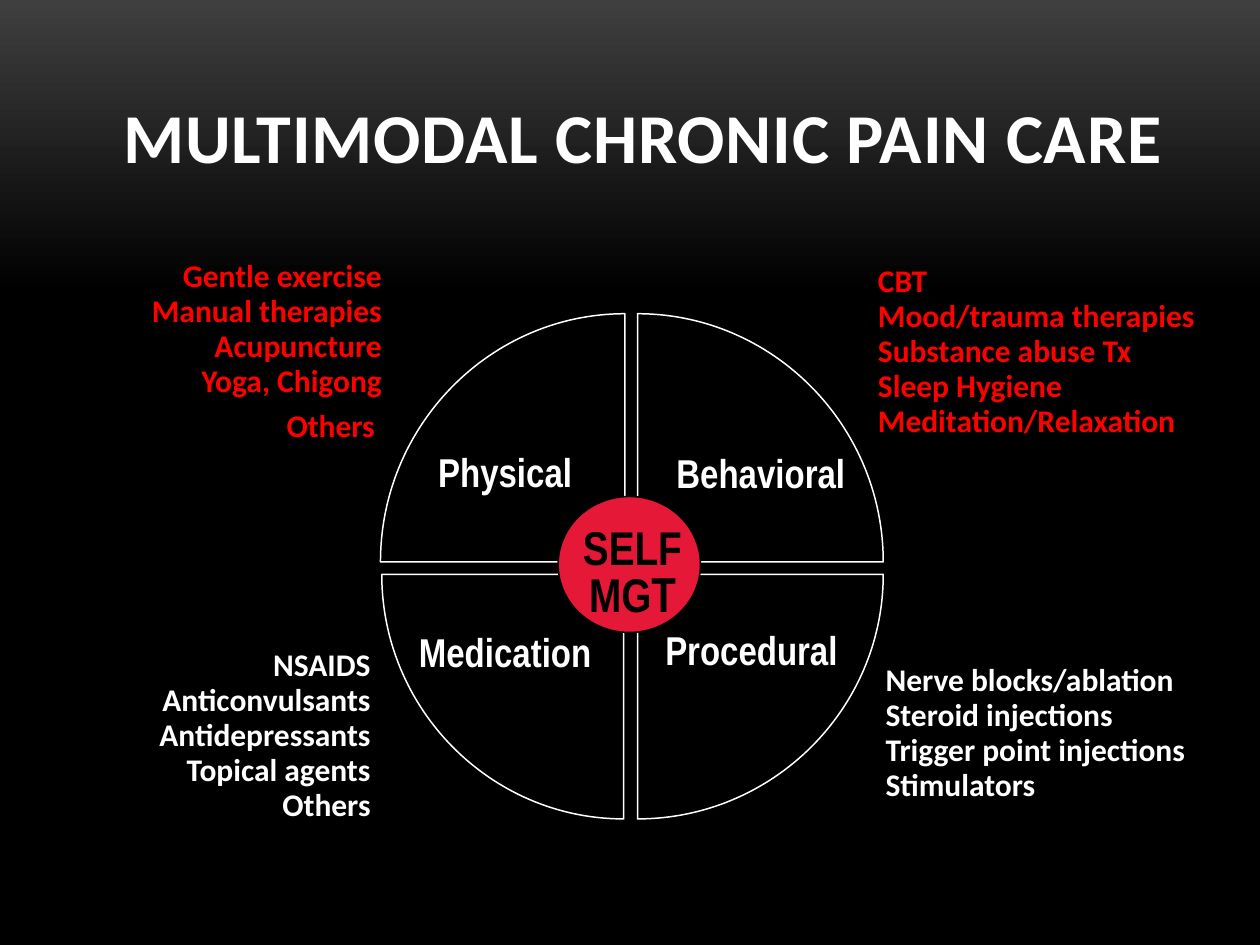
from lxml import etree
from pptx import Presentation
from pptx.dml.color import RGBColor
from pptx.enum.shapes import MSO_SHAPE
from pptx.enum.text import MSO_ANCHOR, MSO_AUTO_SIZE, PP_ALIGN
from pptx.oxml.ns import qn
from pptx.util import Inches, Pt

LEFT, CENTER, RIGHT = PP_ALIGN.LEFT, PP_ALIGN.CENTER, PP_ALIGN.RIGHT
OVAL = MSO_SHAPE.OVAL

THEME = {
    "white": RGBColor(0xFF, 0xFF, 0xFF),
    "black": RGBColor(0x00, 0x00, 0x00),
    "gray": RGBColor(0x3F, 0x3F, 0x3F),
    "red": RGBColor(0xFF, 0x00, 0x00),
    "hub": RGBColor(0xE5, 0x18, 0x37),
    "body": "Calibri",
    "narrow": "Arial Narrow",
    "title_size": 40,
    "hub_size": 27,
    "label_size": 23,
    "list_size": 18,
    "line": 0.85,
}


def add_run(p, text, font, size, color):
    r = p.add_run()
    r.text = text
    r.font.name = THEME[font]
    r.font.size = Pt(size)
    r.font.bold = True
    r.font.color.rgb = THEME[color]
    return r


def add_lines(box, lines, font, size, color, align, spacing=0.8, after=0):
    """Add a text box with one paragraph per line; return its paragraphs."""
    tf = s.shapes.add_textbox(*map(Inches, box)).text_frame
    tf.word_wrap = True
    for i, line in enumerate(lines):
        p = tf.paragraphs[0] if i == 0 else tf.add_paragraph()
        p.alignment = align
        p.line_spacing = spacing
        p.space_after = Pt(after)
        add_run(p, line, font, size, color)
    return tf.paragraphs


prs = Presentation()
prs.slide_width, prs.slide_height = Inches(10), Inches(7.5)
s = prs.slides.add_slide(prs.slide_layouts[5])

fill = s.background.fill
fill.gradient()
fill.gradient_angle = 270
for stop, position, color in zip(fill.gradient_stops, (0, 0.31), ("gray", "black")):
    stop.position = position
    stop.color.rgb = THEME[color]

# Quadrants: inner corner, signed horizontal and vertical radius
quadrants = [
    (4.95, 4.56, -1.92, 1.94),
    (5.06, 4.56, 1.95, 1.94),
    (5.06, 4.46, 1.95, -1.97),
    (4.96, 4.46, -1.94, -1.97),
]
BEZIER = 0.55  # control distance of a quarter circle, as a share of the radius
for x, y, rx, ry in quadrants:
    builder = s.shapes.build_freeform(Inches(x), Inches(y))
    ends = [(Inches(x + rx), Inches(y)), (Inches(x), Inches(y + ry))]
    builder.add_line_segments(ends, close=True)
    quadrant = builder.convert_to_shape()
    quadrant.shadow.inherit = False
    quadrant.fill.solid()
    quadrant.fill.fore_color.rgb = THEME["black"]
    quadrant.line.color.rgb = THEME["white"]
    quadrant.line.width = Pt(THEME["line"])

    # Bend the outer edge into an arc
    outer = quadrant._element.xpath(".//a:lnTo")[1]
    curve = etree.Element(qn("a:cubicBezTo"))
    for u, v in ((1, BEZIER), (BEZIER, 1), (0, 1)):
        px = Inches(u * rx - min(rx, 0))
        py = Inches(v * ry - min(ry, 0))
        etree.SubElement(curve, qn("a:pt"), x=str(px), y=str(py))
    outer.getparent().replace(outer, curve)

hub = s.shapes.add_shape(OVAL, Inches(4.43), Inches(3.94), Inches(1.13), Inches(1.08))
hub.shadow.inherit = False
hub.fill.solid()
hub.fill.fore_color.rgb = THEME["hub"]
hub.line.color.rgb = THEME["black"]
hub.line.width = Pt(THEME["line"])

hub_lines = add_lines((4.44, 4.15, 1.16, 0.85), ["SELF", "MG"],
                      "narrow", THEME["hub_size"], "black", CENTER)
add_run(hub_lines[1], "T", "narrow", THEME["hub_size"] + 1, "black")

title = s.shapes.title
title.left, title.top, title.width, title.height = map(Inches, (0.02, 0.48, 10.17, 0.98))
tf = title.text_frame
tf.auto_size = MSO_AUTO_SIZE.NONE
tf.vertical_anchor = MSO_ANCHOR.BOTTOM
p = tf.paragraphs[0]
p.alignment = CENTER
r = add_run(p, "MULTIMODAL CHRONIC PAIN CARE", "body", THEME["title_size"], "white")
r.font._element.set("spc", "50")

labels = [
    ("Behavioral", (5.27, 3.58, 1.88, 0.41), LEFT, 0.8),
    ("Procedural", (4.97, 4.99, 1.99, 0.42), CENTER, 0.8),
    ("Physical", (2.99, 3.5, 2.04, 0.5), CENTER, 1.0),
    ("Medication", (2.99, 4.97, 2.04, 0.46), CENTER, 0.9),
]
for text, box, align, spacing in labels:
    add_lines(box, [text], "narrow", THEME["label_size"], "white", align, spacing)

behavioral = ["CBT", "Mood/trauma therapies", "Substance abuse Tx",
              "Sleep Hygiene", "Meditation/Relaxation"]
procedural = ["Nerve blocks/ablation", "Steroid injections",
              "Trigger point injections", "Stimulators"]
physical = ["Gentle exercise", "Manual therapies", "Acupuncture",
            "Yoga, Chigong", "Others "]
medication = ["NSAIDS", "Anticonvulsants", "Antidepressants", "Topical agents", "Others"]
treatments = [
    (behavioral, (6.87, 2.08, 3.13, 1.5), "red", LEFT),
    (procedural, (6.93, 5.25, 2.68, 1.7), "white", LEFT),
    (physical, (-0.15, 2.04, 3.28, 1.79), "red", RIGHT),
    (medication, (0.7, 5.13, 2.34, 1.49), "white", RIGHT),
]
for lines, box, color, align in treatments:
    paragraphs = add_lines(box, lines, "body", THEME["list_size"], color, align, after=2.7)
    if lines is physical:
        paragraphs[-1].space_before = Pt(6)

prs.save("out.pptx")
